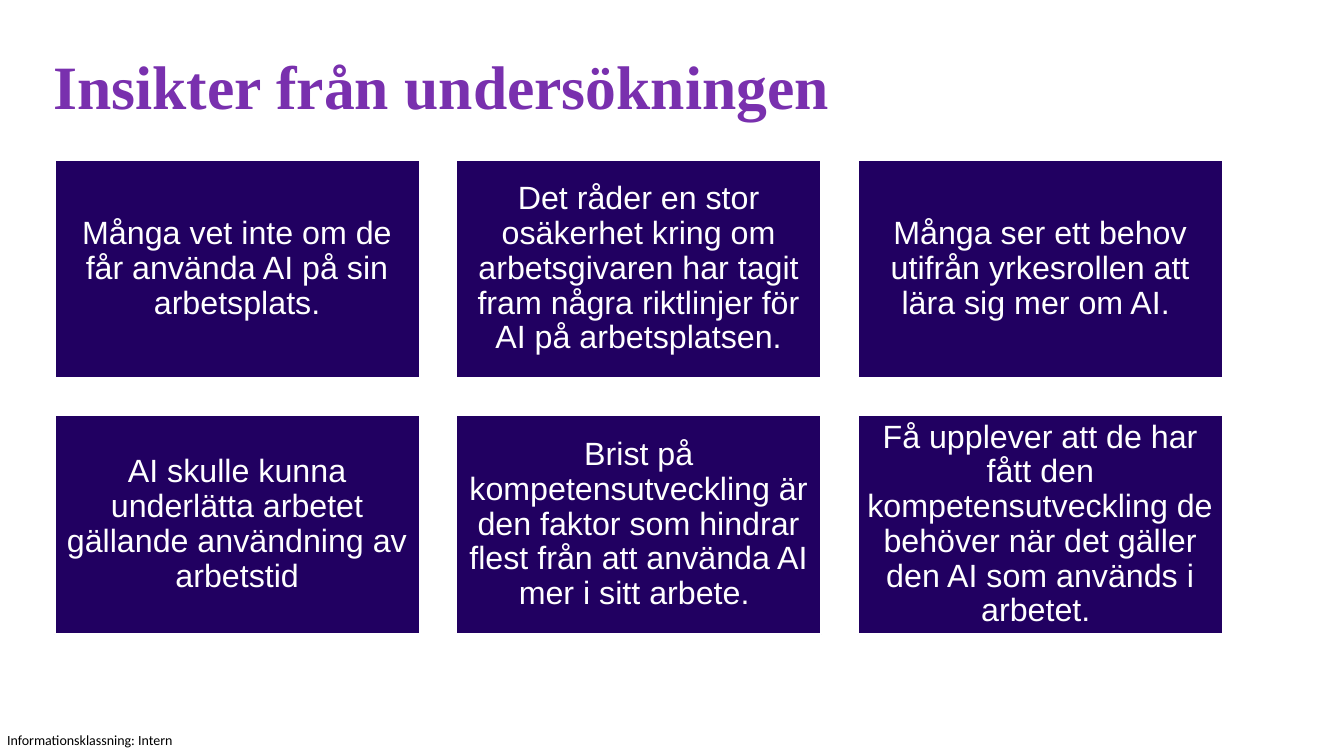
from pptx import Presentation
from pptx.dml.color import RGBColor
from pptx.enum.shapes import MSO_SHAPE
from pptx.enum.text import MSO_ANCHOR, PP_ALIGN
from pptx.util import Cm, Pt


def color(hex_code):
    return RGBColor.from_string(hex_code)


class InsightSlide:
    purple = "7930AE"
    navy = "210061"
    white = "FFFFFF"
    black = "000000"

    def __init__(self, presentation):
        self.slide = presentation.slides.add_slide(presentation.slide_layouts[6])

    def set_text(self, shape, text, font, size, hex_code, bold=False, insets=(0, 0, 0, 0)):
        frame = shape.text_frame
        frame.word_wrap = True
        (frame.margin_left, frame.margin_top,
         frame.margin_right, frame.margin_bottom) = [Cm(inset) for inset in insets]
        frame.text = text
        paragraph = frame.paragraphs[0]
        for run in paragraph.runs:
            run.font.name = font
            run.font.size = Pt(size)
            run.font.bold = bold
            run.font.color.rgb = color(hex_code)
        return frame, paragraph

    def label(self, box, text, font, size, hex_code, **style):
        shape = self.slide.shapes.add_textbox(*[Cm(length) for length in box])
        self.set_text(shape, text, font, size, hex_code, **style)

    def card(self, box, text):
        shape = self.slide.shapes.add_shape(
            MSO_SHAPE.RECTANGLE, *[Cm(length) for length in box])
        shape.shadow.inherit = False
        shape.fill.solid()
        shape.fill.fore_color.rgb = color(self.navy)
        shape.line.color.rgb = color(self.white)
        shape.line.width = Pt(1.5)
        frame, paragraph = self.set_text(
            shape, text, "Arial", 23, self.white, insets=(0.24, 0.24, 0.24, 0.24))
        frame.vertical_anchor = MSO_ANCHOR.MIDDLE
        paragraph.alignment = PP_ALIGN.CENTER
        paragraph.line_spacing = 0.9


def main():
    presentation = Presentation()
    presentation.slide_width = Cm(33.87)
    presentation.slide_height = Cm(19.05)
    page = InsightSlide(presentation)

    # Classification and title
    page.label((0.18, 18.44, 4.27, 0.43), "Informationsklassning: Intern",
               "Calibri", 10, page.black)
    page.label((1.35, 1.02, 27, 3.6), "Insikter från undersökningen",
               "Times New Roman", 44, page.purple, bold=True, insets=(0, 0.18, 0, 0))

    # Insights in a grid of three columns
    insights = [
        "Många vet inte om de får använda AI på sin arbetsplats.",
        "Det råder en stor osäkerhet kring om arbetsgivaren har tagit fram "
        "några riktlinjer för AI på arbetsplatsen.",
        "Många ser ett behov utifrån yrkesrollen att lära sig mer om AI. ",
        "AI skulle kunna underlätta arbetet gällande användning av arbetstid",
        "Brist på kompetensutveckling är den faktor som hindrar flest från att "
        "använda AI mer i sitt arbete. ",
        "Få upplever att de har fått den kompetensutveckling de behöver när det "
        "gäller den AI som används i arbetet. ",
    ]
    columns = 3
    left, top = 1.38, 4.02
    width, height, gap = 9.2, 5.52, 0.92
    for index, insight in enumerate(insights):
        row, column = divmod(index, columns)
        page.card((left + column * (width + gap), top + row * (height + gap),
                   width, height), insight)

    presentation.save("out.pptx")


if __name__ == "__main__":
    main()
